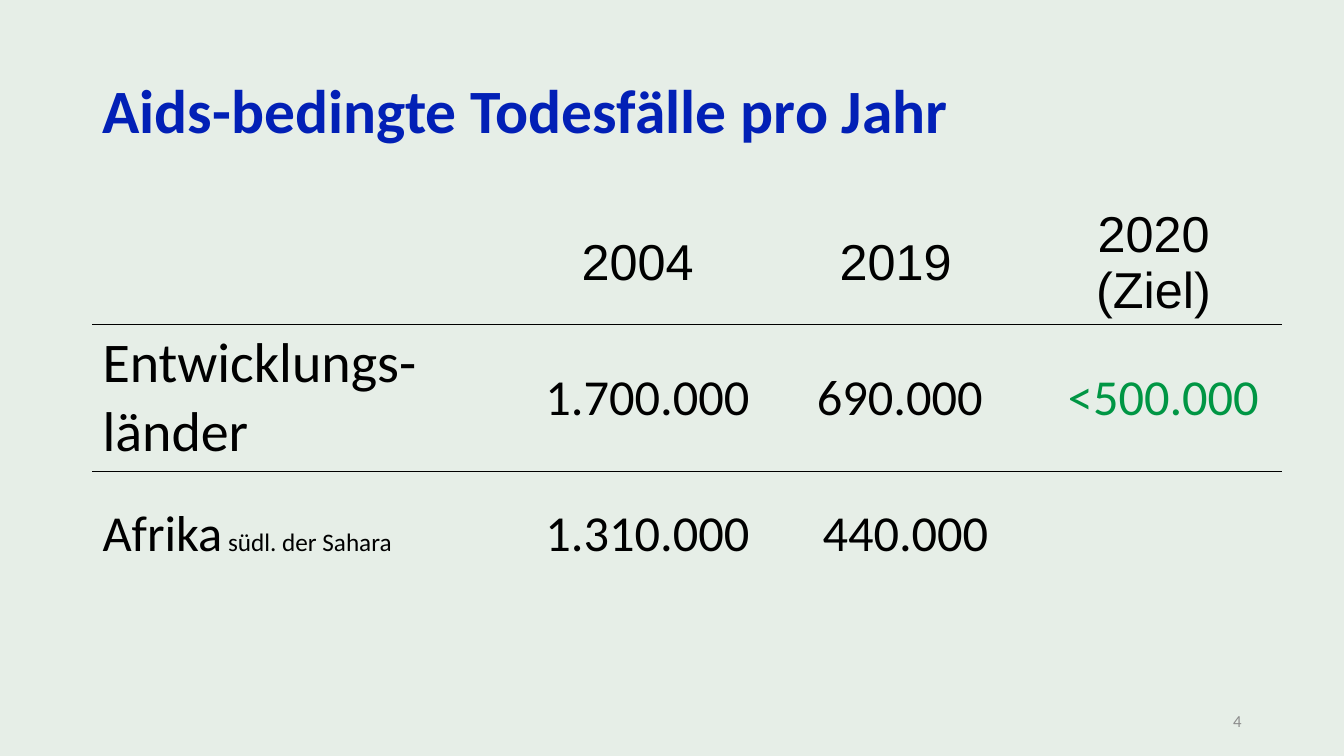
"""Build a slide with a table of yearly Aids-related deaths."""
from lxml.etree import SubElement
from pptx import Presentation
from pptx.dml.color import RGBColor
from pptx.enum.text import MSO_ANCHOR as Anchor, MSO_AUTO_SIZE as AutoSize, PP_ALIGN as Align
from pptx.oxml import parse_xml
from pptx.oxml.ns import nsdecls, qn
from pptx.util import Cm, Pt

MINT = RGBColor(0xE6, 0xEE, 0xE7)
BLUE = RGBColor(0x02, 0x20, 0xB6)
BLACK = RGBColor(0x00, 0x00, 0x00)
GREEN = RGBColor(0x00, 0x96, 0x44)
GREY = RGBColor(0x8C, 0x8C, 0x8C)
NO_GRID_STYLE = "{2D5ABB26-0587-4C30-8999-92F81FD0307C}"
TITLE_ONLY = 5

COLUMN_WIDTHS = (10.49, 6.5, 6.5, 6.5)
ROW_HEIGHTS = (2.67, 3.48, 3.18)
YEARS = ("", "2004", "2019", "2020 (Ziel)")
DEATHS = (
    ([("Entwicklungs-länder", 40)], "1.700.000", "690.000 ", "<500.000"),
    ([("Afrika", 36), (" südl. der Sahara", 18)], "1.310.000", "440.000", ""),
)


class DeathsPage:
    def __init__(self, deck):
        self.font = "Calibri"
        self.page = deck.slides.add_slide(deck.slide_layouts[TITLE_ONLY])
        self.page.background.fill.solid()
        self.page.background.fill.fore_color.rgb = MINT

    def style(self, span, size, color=BLACK, font=None, bold=False):
        span.font.name = font or self.font
        span.font.size = Pt(size)
        span.font.color.rgb = color
        span.font.bold = bold

    def place(self, box, left, top, width, height):
        box.left, box.top, box.width, box.height = map(Cm, (left, top, width, height))
        box.text_frame.word_wrap = True
        box.text_frame.auto_size = AutoSize.NONE
        box.text_frame.vertical_anchor = Anchor.MIDDLE

    def title(self, text, *frame):
        box = self.page.shapes.title
        box.text_frame.text = text
        self.place(box, *frame)
        para = box.text_frame.paragraphs[0]
        para.alignment = Align.LEFT
        para.line_spacing = 0.9
        self.style(para.runs[0], 44, BLUE, bold=True)

    def page_number(self, text, *frame):
        box = self.page.shapes.add_textbox(0, 0, 0, 0)
        box.text_frame.text = text
        self.place(box, *frame)
        para = box.text_frame.paragraphs[0]
        para.alignment = Align.RIGHT
        self.style(para.runs[0], 12, GREY)

    def table(self, left, top):
        table = self.page.shapes.add_table(
            len(ROW_HEIGHTS), len(COLUMN_WIDTHS), Cm(left), Cm(top),
            Cm(sum(COLUMN_WIDTHS)), Cm(sum(ROW_HEIGHTS))).table
        table.first_row = table.horz_banding = False
        table._tbl.tblPr.find(qn("a:tableStyleId")).text = NO_GRID_STYLE
        for column, width in zip(table.columns, COLUMN_WIDTHS):
            column.width = Cm(width)
        for row, height in zip(table.rows, ROW_HEIGHTS):
            row.height = Cm(height)
        for cell in table.iter_cells():
            cell.vertical_anchor = Anchor.MIDDLE
            cell.fill.background()
        for column, year in enumerate(YEARS):
            self.value(table.cell(0, column), year, font="Arial")
        for row, (label, *counts) in enumerate(DEATHS, 1):
            self.label(table.cell(row, 0), label)
            for column, count in enumerate(counts, 1):
                color = GREEN if count.startswith("<") else BLACK
                self.value(table.cell(row, column), count, color, indent=0.5)
            for column in range(len(COLUMN_WIDTHS)):
                self.rule(table.cell(row - 1, column), "lnB")
                self.rule(table.cell(row, column), "lnT")

    def label(self, cell, spans):
        para = cell.text_frame.paragraphs[0]
        for text, size in spans:
            span = para.add_run()
            span.text = text
            self.style(span, size)

    def value(self, cell, text, color=BLACK, font=None, indent=0):
        cell.text_frame.text = text
        para = cell.text_frame.paragraphs[0]
        para.alignment = Align.CENTER
        if indent:
            properties = para._p.get_or_add_pPr()
            properties.set("marL", str(Cm(indent)))
            properties.set("indent", "0")
        for span in para.runs:
            self.style(span, 36, color, font)

    def rule(self, cell, side):
        line = parse_xml(f'<a:{side} {nsdecls("a")} w="{Pt(1)}"/>')
        fill = SubElement(line, qn("a:solidFill"))
        SubElement(fill, qn("a:srgbClr"), val=str(BLACK))
        properties = cell._tc.get_or_add_tcPr()
        position = 1 if properties.find(qn("a:lnT")) is not None else 0
        properties.insert(position, line)


def main():
    deck = Presentation()
    deck.slide_width, deck.slide_height = Cm(33.87), Cm(19.05)
    page = DeathsPage(deck)
    page.title("Aids-bedingte Todesfälle pro Jahr", 2.33, 1.01, 29.21, 3.68)
    page.table(2.33, 5.08)
    page.page_number("4", 23.92, 17.66, 7.62, 1.01)
    deck.save("out.pptx")


if __name__ == "__main__":
    main()
